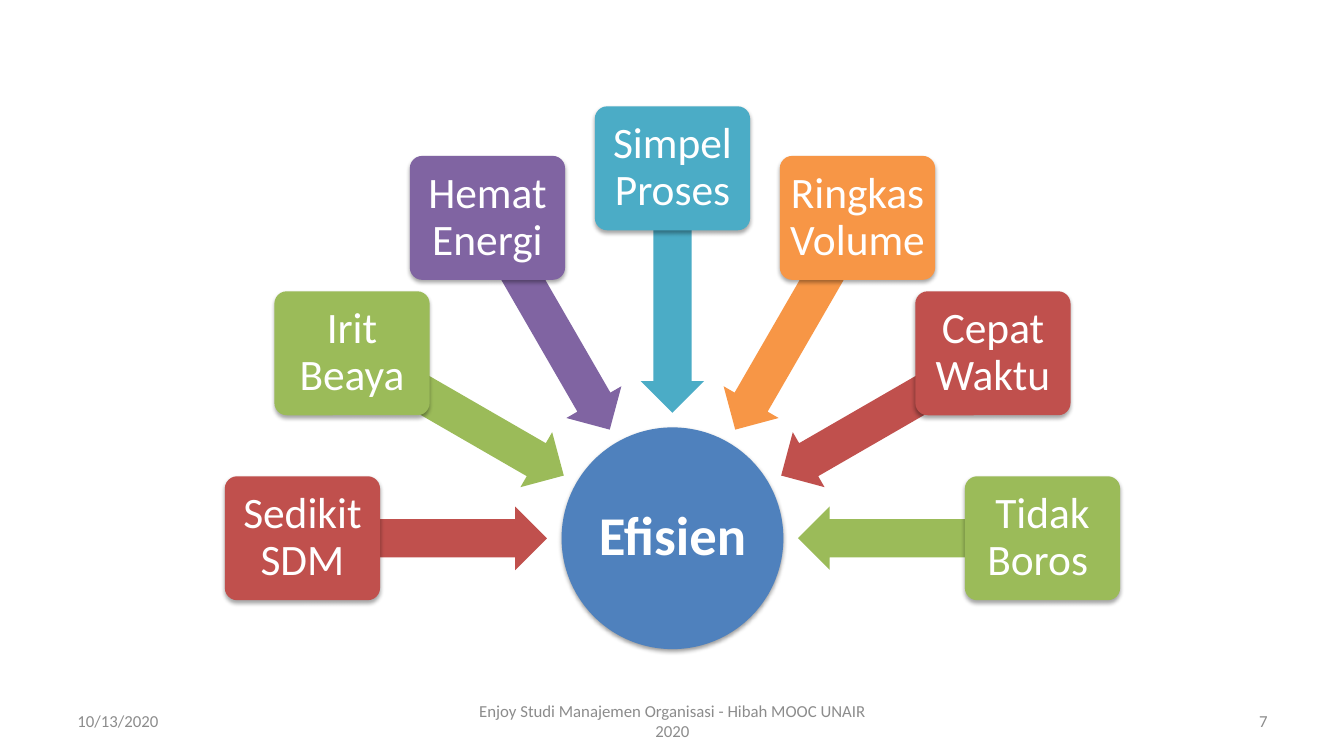
from math import cos, radians, sin

from lxml.etree import SubElement
from pptx import Presentation
from pptx.dml.color import RGBColor
from pptx.enum.shapes import MSO_SHAPE
from pptx.enum.text import MSO_ANCHOR, PP_ALIGN
from pptx.oxml.ns import qn
from pptx.util import Inches, Pt

COLOURS = {
    "blue": "4F81BD", "red": "C0504D", "green": "9BBB59", "purple": "8064A2",
    "teal": "4BACC6", "orange": "F79646", "white": "FFFFFF", "grey": "8C8C8C",
}
TRAITS = [
    ("Sedikit SDM", "red"), ("Irit Beaya", "green"), ("Hemat Energi", "purple"),
    ("Simpel Proses", "teal"), ("Ringkas Volume", "orange"),
    ("Cepat Waktu", "red"), ("Tidak Boros ", "green"),
]
FOOTERS = [
    (0.67, 3.11, "10/13/2020", PP_ALIGN.LEFT),
    (4.56, 4.22, "Enjoy Studi Manajemen Organisasi - Hibah MOOC UNAIR 2020", PP_ALIGN.CENTER),
    (9.56, 3.11, "7", PP_ALIGN.RIGHT),
]
HUB_X, HUB_Y = 6.67, 5.34
ARROW_RADIUS, CARD_RADIUS = 2.46, 3.67
STEP = 180 / (len(TRAITS) - 1)


class RadialSlide:
    font = "Calibri"

    def __init__(self, page):
        self.page = page

    def set_text(self, box, text, size, colour, align, bold=False):
        frame = box.text_frame
        frame.word_wrap = True
        frame.vertical_anchor = MSO_ANCHOR.MIDDLE
        para = frame.paragraphs[0]
        para.text = text
        para.alignment = align
        para.font.name = self.font
        para.font.size = Pt(size)
        para.font.bold = bold
        para.font.color.rgb = RGBColor.from_string(COLOURS[colour])
        return para

    def footer(self, left, width, text, align):
        box = self.page.shapes.add_textbox(Inches(left), Inches(6.95), Inches(width), Inches(0.4))
        self.set_text(box, text, 12, "grey", align)

    def shape(self, preset, x, y, width, height, colour):
        """Add a flat shape centred on x, y."""
        shape = self.page.shapes.add_shape(
            preset, Inches(x - width / 2), Inches(y - height / 2), Inches(width), Inches(height))
        shape.shadow.inherit = False
        shape.fill.solid()
        shape.fill.fore_color.rgb = RGBColor.from_string(COLOURS[colour])
        shape.line.fill.background()
        return shape

    def drop_shadow(self, shape, distance, opacity):
        effects = shape._element.spPr.find(qn("a:effectLst"))
        shadow = SubElement(effects, qn("a:outerShdw"), blurRad=str(Pt(3.1)),
                            dist=str(Pt(distance)), dir="5400000", rotWithShape="0")
        black = SubElement(shadow, qn("a:srgbClr"), val="000000")
        SubElement(black, qn("a:alpha"), val=str(opacity * 1000))

    def label(self, shape, text, size, inset, bold=False):
        frame = shape.text_frame
        frame.margin_left = frame.margin_right = Inches(inset)
        frame.margin_top = frame.margin_bottom = Inches(inset)
        para = self.set_text(shape, text, size, "white", PP_ALIGN.CENTER, bold)
        para.line_spacing = 0.9

    def hub(self, text):
        circle = self.shape(MSO_SHAPE.OVAL, HUB_X, HUB_Y, 2.2, 2.2, "blue")
        self.drop_shadow(circle, 1.6, 38)
        self.label(circle, text, 39, 0.03, bold=True)

    def arrow(self, angle, colour):
        x, y = around_hub(angle, ARROW_RADIUS)
        arrow = self.shape(MSO_SHAPE.LEFT_ARROW, x, y, 2.43, 0.63, colour)
        arrow.adjustments[0] = 0.6
        arrow.adjustments[1] = 0.5
        arrow.rotation = angle

    def card(self, angle, text, colour):
        x, y = around_hub(angle, CARD_RADIUS)
        card = self.shape(MSO_SHAPE.ROUNDED_RECTANGLE, x, y, 1.54, 1.23, colour)
        card.adjustments[0] = 0.1
        self.drop_shadow(card, 1.8, 35)
        self.label(card, text, 31, 0.06)


def around_hub(angle, radius):
    return HUB_X + radius * cos(radians(angle)), HUB_Y + radius * sin(radians(angle))


def main():
    deck = Presentation()
    deck.slide_width, deck.slide_height = Inches(13.33), Inches(7.5)
    slide = RadialSlide(deck.slides.add_slide(deck.slide_layouts[6]))
    for footer in FOOTERS:
        slide.footer(*footer)
    slide.hub("Efisien")
    for index, (text, colour) in enumerate(TRAITS):
        angle = (180 + index * STEP) % 360
        slide.arrow(angle, colour)
        slide.card(angle, text, colour)
    deck.save("out.pptx")


if __name__ == "__main__":
    main()
